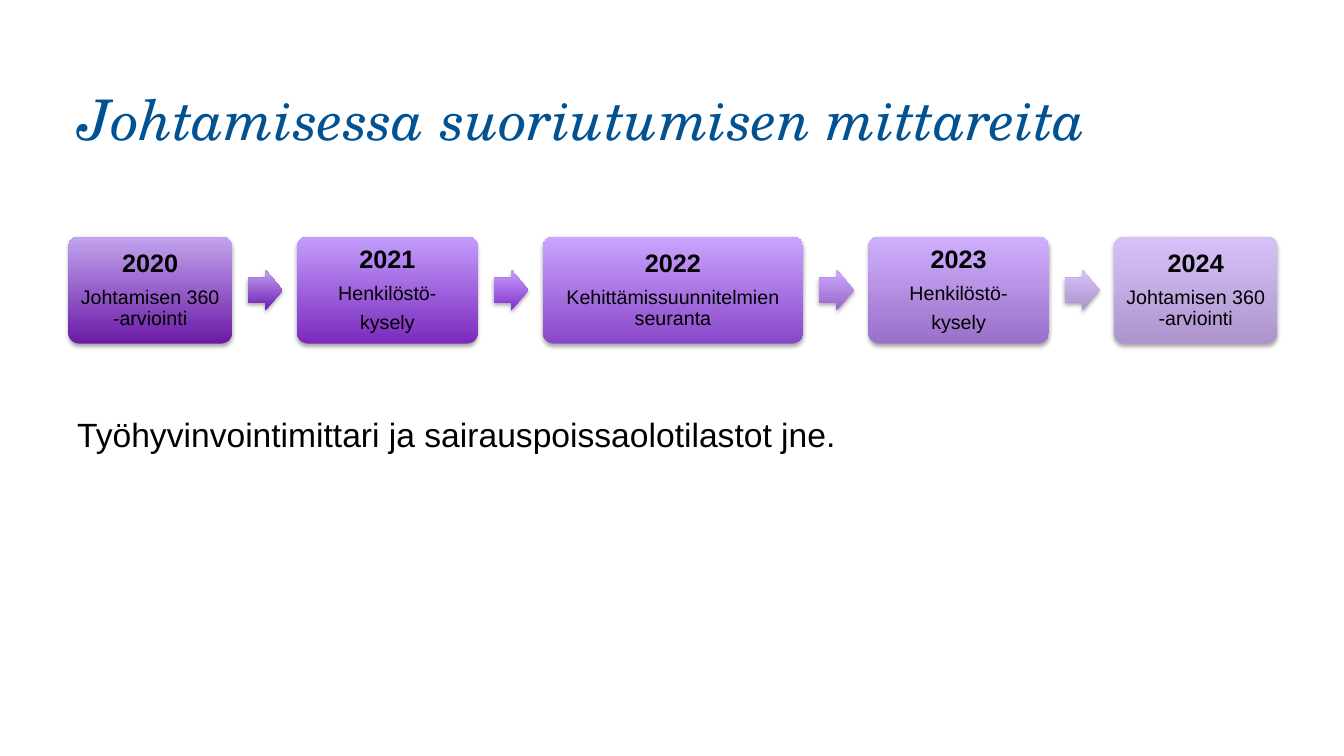
from lxml import etree
from pptx import Presentation
from pptx.dml.color import RGBColor
from pptx.enum.shapes import MSO_SHAPE
from pptx.enum.text import MSO_ANCHOR, MSO_AUTO_SIZE, PP_ALIGN
from pptx.oxml.ns import qn
from pptx.util import Inches, Pt

ROUNDED = MSO_SHAPE.ROUNDED_RECTANGLE
ARROW = MSO_SHAPE.RIGHT_ARROW
CENTER = PP_ALIGN.CENTER
TOP, MIDDLE, BOTTOM = MSO_ANCHOR.TOP, MSO_ANCHOR.MIDDLE, MSO_ANCHOR.BOTTOM
GROW = MSO_AUTO_SIZE.SHAPE_TO_FIT_TEXT

FIRST_LEFT, STEP_GAP = 5.1, 4.86
STEP_TOP, STEP_HEIGHT = 31.3, 14.15
ARROW_OFFSET, ARROW_WIDTH, ARROW_HEIGHT = 1.2, 2.58, 5.4

STEPS = [
    (12.15, ["2020", "Johtamisen 360 -arviointi"], ("6A1AA6", "C2A4ED")),
    (13.43, ["2021", "Henkilöstö-", "kysely"], ("7A2ABE", "C49DFD")),
    (19.35, ["2022", "Kehittämissuunnitelmien seuranta"], ("8947C9", "CAA4FF")),
    (13.43, ["2023", "Henkilöstö-", "kysely"], ("9A70C9", "D0AFFE")),
    (12.15, ["2024", "Johtamisen 360 -arviointi"], ("AD94CC", "D8C1F9")),
]
ARROW_COLOURS = [
    ("6F1BAF", "C3A1F3"),
    ("8231CA", "C7A1FF"),
    ("9664C9", "CEABFF"),
    ("AD93CC", "D8C0F9"),
]


def colour(value):
    return RGBColor.from_string(value)


def write(paragraph, text, size=14, font="Arial", fill="000000", bold=False,
          italic=False, align=None, line_spacing=None, space_after=None):
    run = paragraph.add_run()
    run.text = text
    run.font.size = Pt(size)
    run.font.name = font
    run.font.bold = bold
    run.font.italic = italic
    run.font.color.rgb = colour(fill)
    paragraph.alignment = align
    paragraph.line_spacing = line_spacing
    paragraph.space_after = space_after


class SlideBuilder:
    def __init__(self, presentation):
        self.width = presentation.slide_width
        self.height = presentation.slide_height
        self.slide = presentation.slides.add_slide(presentation.slide_layouts[6])

    def area(self, left, top, width, height):
        return [round(share * side / 100) for share, side in
                zip((left, top, width, height), (self.width, self.height) * 2)]

    def text(self, area, text, anchor=TOP, auto_size=None, **style):
        frame = self.slide.shapes.add_textbox(*self.area(*area)).text_frame
        frame.word_wrap = True
        frame.vertical_anchor = anchor
        frame.auto_size = auto_size
        write(frame.paragraphs[0], text, **style)

    def shape(self, kind, area, colours, adjustments):
        shape = self.slide.shapes.add_shape(kind, *self.area(*area))
        for index, value in enumerate(adjustments):
            shape.adjustments[index] = value
        shape.line.fill.background()
        shape.fill.gradient()
        shape.fill.gradient_angle = 90
        for stop, value in zip(shape.fill.gradient_stops, colours):
            stop.color.rgb = colour(value)
        self.shadow(shape)
        return shape

    def shadow(self, shape):
        shape.shadow.inherit = False
        effects = shape._element.spPr.find(qn("a:effectLst"))
        outer = etree.SubElement(effects, qn("a:outerShdw"), blurRad=str(Pt(3.1)),
                                 dist=str(Pt(1.8)), dir="5400000", rotWithShape="0")
        black = etree.SubElement(outer, qn("a:srgbClr"), val="000000")
        etree.SubElement(black, qn("a:alpha"), val="35000")

    def step(self, left, width, lines, colours):
        shape = self.shape(ROUNDED, (left, STEP_TOP, width, STEP_HEIGHT), colours, [0.1])
        frame = shape.text_frame
        frame.word_wrap = True
        frame.vertical_anchor = MIDDLE
        frame.margin_left = frame.margin_right = Inches(0.07)
        frame.margin_top = frame.margin_bottom = Inches(0.07)
        for index, line in enumerate(lines):
            paragraph = frame.add_paragraph() if index else frame.paragraphs[0]
            size = 14 if index else 18
            write(paragraph, line, size=size, bold=index == 0, align=CENTER,
                  line_spacing=0.9, space_after=Pt(size * 0.38))

    def arrow(self, left, colours):
        top = STEP_TOP + (STEP_HEIGHT - ARROW_HEIGHT) / 2
        self.shape(ARROW, (left, top, ARROW_WIDTH, ARROW_HEIGHT), colours, [0.6, 0.5])


def main():
    presentation = Presentation()
    presentation.slide_width = Inches(13.33)
    presentation.slide_height = Inches(7.5)
    builder = SlideBuilder(presentation)

    builder.text((5, 4, 90, 16.67), "Johtamisessa suoriutumisen mittareita", anchor=BOTTOM,
                 size=40, font="TeX Gyre Schola", fill="005293", italic=True)

    left = FIRST_LEFT
    for index, (width, lines, colours) in enumerate(STEPS):
        builder.step(left, width, lines, colours)
        left += width
        if index < len(ARROW_COLOURS):
            builder.arrow(left + ARROW_OFFSET, ARROW_COLOURS[index])
        left += STEP_GAP

    builder.text((5, 54.13, 88.4, 6.73),
                 "Työhyvinvointimittari ja sairauspoissaolotilastot jne.",
                 auto_size=GROW, size=24)

    presentation.save("out.pptx")


if __name__ == "__main__":
    main()
